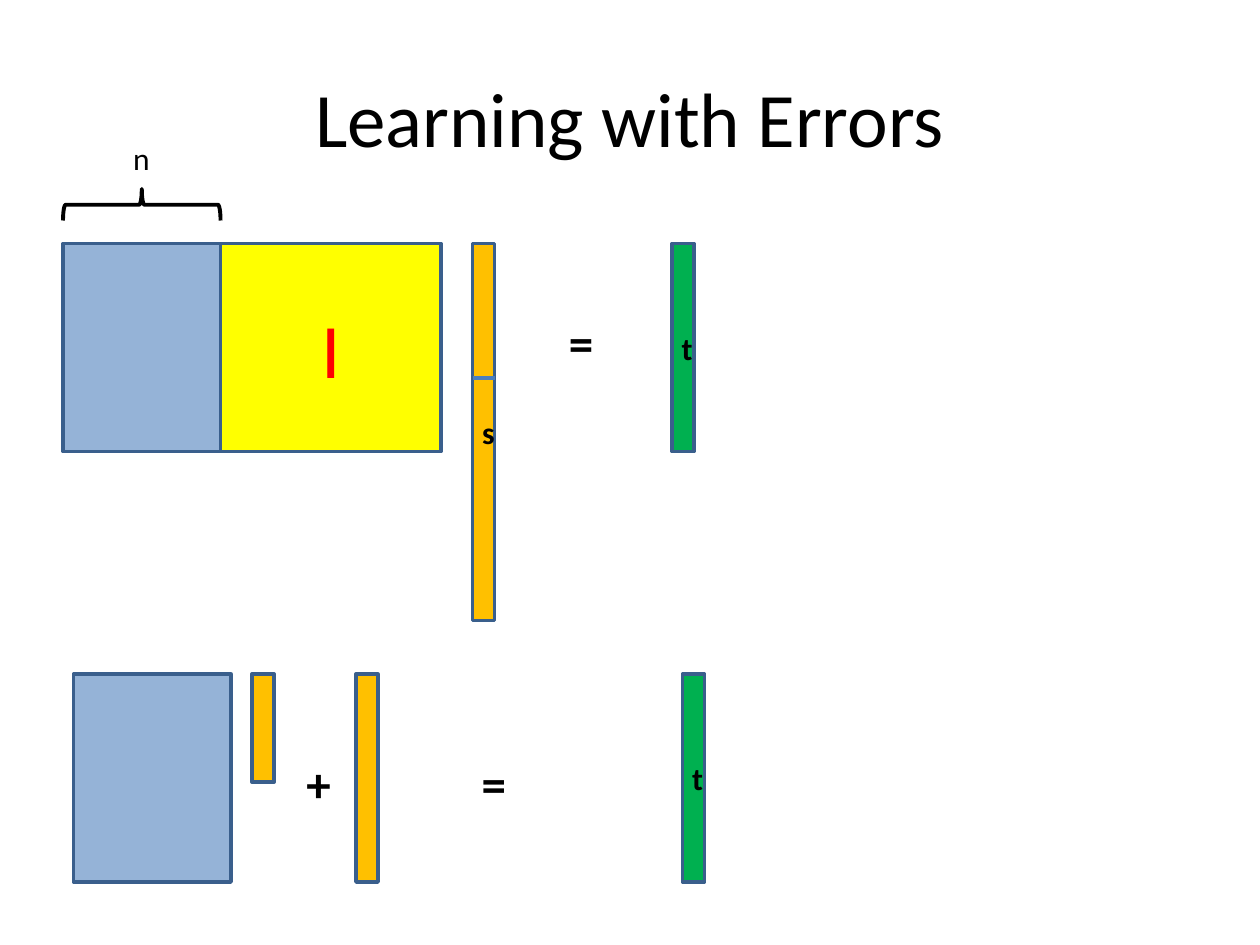
from pptx import Presentation
from pptx.dml.color import RGBColor
from pptx.enum.shapes import MSO_CONNECTOR as Connector, MSO_SHAPE as Shape
from pptx.enum.text import MSO_ANCHOR as Anchor, MSO_AUTO_SIZE as AutoSize, PP_ALIGN as Align
from pptx.oxml.ns import qn
from pptx.util import Inches, Pt

CELL = 1 / 12  # inches; the slide is 120 columns by 90 rows
COLORS = {
    "black": "000000", "red": "FF0000", "outline": "3A5F8C", "divider": "4B7EBC",
    "matrix": "95B3D7", "identity": "FFFF00", "secret": "FFC000", "target": "00B050",
}


def color(name):
    return RGBColor.from_string(COLORS[name])


def cells(*counts):
    return [Inches(count * CELL) for count in counts]


def write(shape, text, size=18, bold=False, ink="black", align=Align.CENTER, anchor=Anchor.MIDDLE):
    frame = shape.text_frame
    frame.word_wrap = True
    frame.vertical_anchor = anchor
    paragraph = frame.paragraphs[0]
    paragraph.alignment = align
    run = paragraph.add_run()
    run.text = text
    run.font.name = "Calibri"
    run.font.size = Pt(size)
    run.font.bold = bold
    run.font.color.rgb = color(ink)


class EquationSlide:
    """Draws on one slide; every length is a number of grid columns or rows."""

    def __init__(self, slide):
        self.shapes = slide.shapes

    def title(self, text, left, top, width, height):
        write(self.shapes.add_textbox(*cells(left, top, width, height)), text, size=44)

    def block(self, fill, left, top, width, height, text=None, **text_format):
        shape = self.shapes.add_shape(Shape.RECTANGLE, *cells(left, top, width, height))
        shape.shadow.inherit = False
        shape.fill.solid()
        shape.fill.fore_color.rgb = color(fill)
        shape.line.color.rgb = color("outline")
        shape.line.width = Pt(2)
        if text:
            write(shape, text, **text_format)

    def label(self, text, left, top, width, height, **text_format):
        box = self.shapes.add_textbox(*cells(left, top, width, height))
        write(box, text, align=Align.LEFT, anchor=Anchor.TOP, **text_format)
        box.text_frame.auto_size = AutoSize.SHAPE_TO_FIT_TEXT

    def operator(self, symbol, left, top):
        self.label(symbol, left, top, 5, 6.8, size=28, bold=True)

    def brace_above(self, left, top, width, height):
        """Turn a left brace so that it spans the given width."""
        shift = (width - height) / 2
        brace = self.shapes.add_shape(
            Shape.LEFT_BRACE, *cells(left + shift, top - shift, height, width))
        brace.rotation = 90
        brace.shadow.inherit = False
        brace.fill.background()
        brace.line.color.rgb = color("black")
        brace.line.width = Pt(2.25)

    def divider(self, left, row, width):
        line = self.shapes.add_connector(
            Connector.STRAIGHT, *cells(left, row, left + width, row))
        line.line.color.rgb = color("divider")
        line.line.width = Pt(2.25)
        properties = line._element.spPr
        properties.append(properties.makeelement(qn("a:effectLst"), {}))


def main():
    presentation = Presentation()
    presentation.slide_width, presentation.slide_height = cells(120, 90)
    page = EquationSlide(presentation.slides.add_slide(presentation.slide_layouts[6]))
    page.title("Learning with Errors", 6, 3.6, 108, 15)

    matrix_width, matrix_height, bar = 15, 19.8, 2.1
    upper, lower = 23.2, 64.2

    # Upper equation: [A | I] s = t
    page.brace_above(6, 18, matrix_width, 3)
    page.label("n", 11.5, 12.7, 4, 5)
    page.block("matrix", 6, upper, matrix_width, matrix_height)
    page.block("identity", 6 + matrix_width, upper, 21, matrix_height, "I", size=44, ink="red")
    page.block("target", 64, upper, bar, matrix_height, "t", bold=True)
    page.block("secret", 45, upper, bar, 35.9, "s", bold=True)
    page.divider(45, 36, bar)
    page.operator("=", 53, 29.2)

    # Lower equation: A s1 + s2 = t
    page.block("matrix", 7, lower, matrix_width, matrix_height)
    page.block("target", 65, lower, bar, matrix_height, "t", bold=True)
    page.block("secret", 33.9, lower, bar, matrix_height)
    page.block("secret", 24, lower, bar, 10.3)
    page.operator("+", 28, 71.2)
    page.operator("=", 44.7, 71.2)

    presentation.save("out.pptx")


if __name__ == "__main__":
    main()
